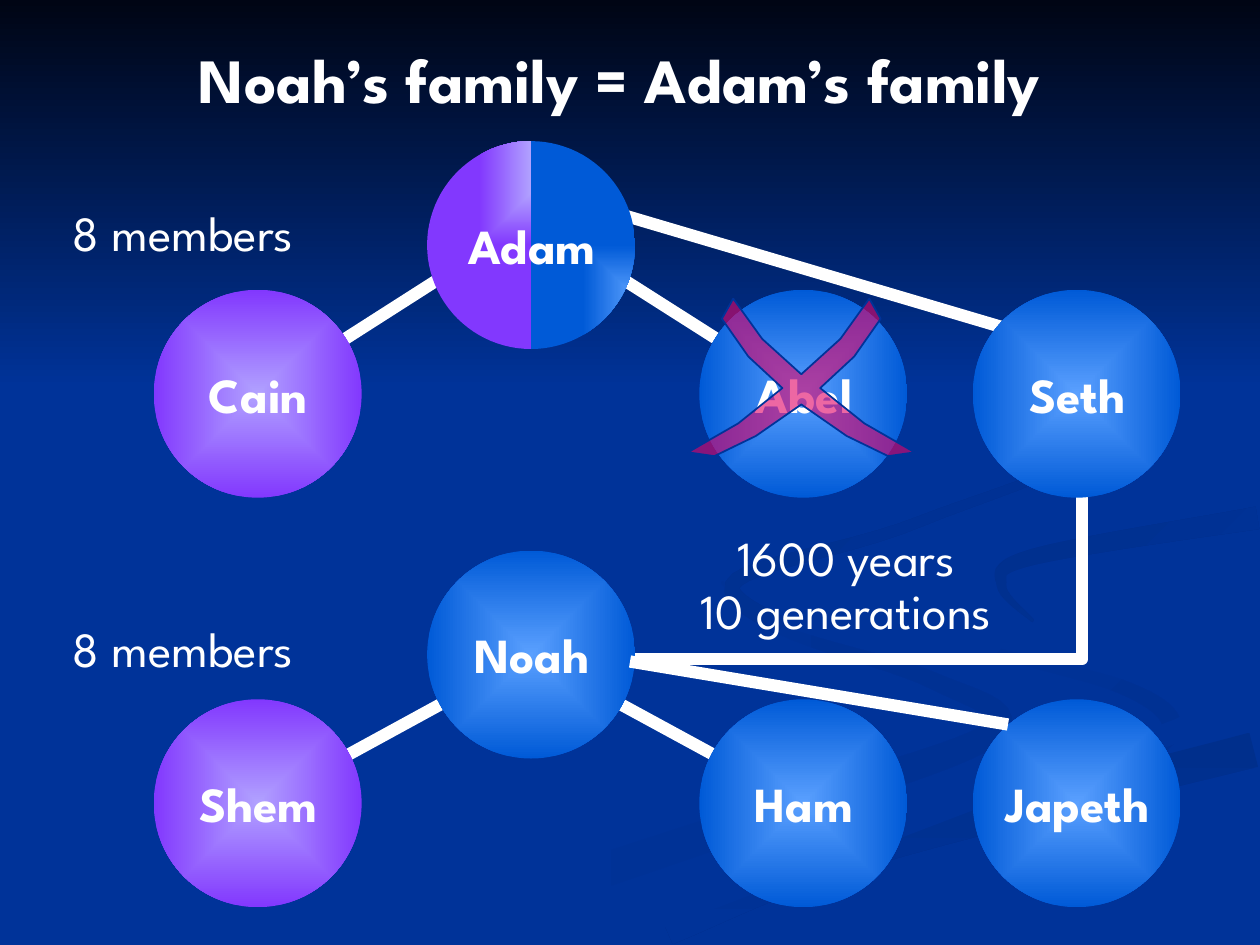
import math
from lxml import etree
from pptx import Presentation
from pptx.dml.color import RGBColor
from pptx.enum import shapes, text
from pptx.oxml import ns
from pptx.util import Inches, Pt

WHITE = RGBColor(0xFF, 0xFF, 0xFF)
BLACK = RGBColor(0x00, 0x05, 0x14)
NAVY = RGBColor(0x00, 0x33, 0x99)
DARK = RGBColor(0x00, 0x2F, 0x8C)
DIM = RGBColor(0x00, 0x31, 0x93)
PINK = RGBColor(0xE2, 0x02, 0x67)
BLUE = RGBColor(0x5A, 0xA0, 0xFF), RGBColor(0x00, 0x5A, 0xD7)
PURPLE = RGBColor(0xB1, 0xA1, 0xFF), RGBColor(0x82, 0x38, 0xFE)
FONT = "League Spartan"
SIZE = 1.65

COLS = [1.22, 3.39, 5.55, 7.72]
ROWS = [1.12, 2.3, 4.37, 5.55]
FAMILY = [
    ("Cain", 0, 1, PURPLE), ("Abel", 2, 1, BLUE), ("Shem", 0, 3, PURPLE),
    ("Ham", 2, 3, BLUE), ("Noah", 1, 2, BLUE), ("Seth", 3, 1, BLUE),
    ("Japeth", 3, 3, BLUE),
]
LINKS = [
    (4.21, 1.49, 8.54, 2.77), (4.21, 5.2, 6.38, 6.38), (4.21, 1.75, 6.38, 3.13),
    (4.21, 5.2, 2.05, 6.38), (2.05, 3.13, 4.21, 1.75),
]
BEND = [(4.26, 5.23), (8.59, 5.23), (8.59, 3.16)]
NOTES = [
    (["Noah’s family = Adam’s family"], (0.42, 0, 9, 1.25),
     dict(size=36, bold=True, anchor=text.MSO_ANCHOR.MIDDLE)),
    (["1600 years", "10 generations"], (4.7, 4.19, 4.03, 0.94), dict(gap=0.9)),
    (["8 members"], (0.48, 1.56, 2.55, 0.57), dict(align=text.PP_ALIGN.LEFT)),
    (["8 members"], (0.48, 4.86, 2.55, 0.57), dict(align=text.PP_ALIGN.LEFT)),
]
SWIRLS = [
    ([(5.73, 4.62), (6.2, 5), (7.4, 5.4), (7.9, 5.8), (6.3, 6.4), (3.3, 7.4)],
     0.02, 0.3, NAVY, DIM, 0),
    ([(7.25, 4.66), (7.7, 5.1), (8.9, 5.45), (9.3, 5.75), (9, 6.04)],
     0.02, 0.2, NAVY, DIM, 45),
    ([(5.3, 7.4), (6.9, 6.75), (9.95, 5.95)], 0.2, 0.28, DARK, NAVY, 90),
    ([(9.98, 3.95), (7.6, 4.45), (7.8, 4.95), (9.6, 5.6), (7.8, 6.3), (4.9, 7.4)],
     0.15, 0.2, NAVY, NAVY, 0),
    ([(9.98, 4.11), (8.2, 4.42), (7.95, 4.65), (8.2, 4.93)], 0.18, 0.02, DARK, NAVY, 45),
    ([(7.62, 2.35), (8.9, 3.35), (7.3, 4.14), (5.85, 4.6), (6.2, 4.98)],
     0.02, 0.15, DARK, NAVY, 45),
]
SKY = [(0, 0), (0, 3.08), (10, 3.08), (10, 0)]
AXIS = 6.36
ARMS = [
    (0, 2.97), (0.31, 2.69), (0.54, 2.37), (0.63, 2.53), (0.42, 2.83), (0.15, 3.08),
    (0.5, 3.36), (0.9, 3.59), (0.69, 3.62), (0.36, 3.46), (0, 3.21),
]

deck = Presentation()
deck.slide_width, deck.slide_height = Inches(10), Inches(7.5)
slide = deck.slides.add_slide(deck.slide_layouts[6])
slide.background.fill.solid()
slide.background.fill.fore_color.rgb = NAVY
tree = slide.shapes


def outline(points, close=True):
    spots = [(Inches(x), Inches(y)) for x, y in points]
    form = tree.build_freeform(*spots[0])
    form.add_line_segments(spots[1:], close=close)
    shape = form.convert_to_shape()
    shape.shadow.inherit = False
    return shape


def shade(shape, first, last, angle=0, focus=None, kind="shape"):
    shape.line.fill.background()
    shape.fill.gradient()
    for stop, color in zip(shape.fill.gradient_stops, (first, last)):
        stop.color.rgb = color
    shape.fill.gradient_angle = -angle % 360
    if focus:
        lin = shape.element.find(".//" + ns.qn("a:lin"))
        way = etree.Element(ns.qn("a:path"), path=kind)
        sides = {s: str(v * 1000) for s, v in zip("ltrb", focus)}
        etree.SubElement(way, ns.qn("a:fillToRect"), sides)
        lin.getparent().replace(lin, way)


def ink(line, color=WHITE, width=7):
    line.color.rgb = color
    line.width = Pt(width)


def link(x1, y1, x2, y2):
    ends = [Inches(v) for v in (x1, y1, x2, y2)]
    line = tree.add_connector(shapes.MSO_CONNECTOR.STRAIGHT, *ends)
    ink(line.line)
    etree.SubElement(line.element.spPr, ns.qn("a:effectLst"))


def write(lines, place, size=28, bold=False, align=text.PP_ALIGN.CENTER,
          anchor=text.MSO_ANCHOR.TOP, gap=None, side=0.1):
    frame = tree.add_textbox(*map(Inches, place)).text_frame
    form = dict(word_wrap=True, vertical_anchor=anchor,
                margin_left=Inches(side), margin_right=Inches(side))
    for key, value in form.items():
        setattr(frame, key, value)
    frame.text = "\n".join(lines)
    for para in frame.paragraphs:
        para.alignment, para.line_spacing = align, gap
        font = para.runs[0].font
        for key, value in dict(name=FONT, size=Pt(size), bold=bold).items():
            setattr(font, key, value)
        font.color.rgb = WHITE


def label(name, x, y):
    write([name], (x - 0.11, y + 0.54, 1.88, 0.57), bold=True, side=0.04)


def half(x, y, sign):
    r = SIZE / 2
    turns = [math.pi * i / 48 for i in range(49)]
    return outline([(x + r + sign * r * math.sin(t), y + r - r * math.cos(t)) for t in turns])


def smooth(points, steps=10):
    ends = [points[0], *points, points[-1]]
    trail = []
    for i in range(len(points) - 1):
        for t in (s / steps for s in range(steps)):
            trail.append([
                (2 * b + (c - a) * t + (2 * a - 5 * b + 4 * c - d) * t * t
                 + (3 * b - a - 3 * c + d) * t ** 3) / 2
                for a, b, c, d in zip(*ends[i:i + 4])])
    return trail + [points[-1]]


def ribbon(points, thin, wide):
    trail = smooth(points)
    last = len(trail) - 1
    left, right = [], []
    for i, (x, y) in enumerate(trail):
        (x1, y1), (x2, y2) = trail[max(i - 1, 0)], trail[min(i + 1, last)]
        turn = math.atan2(y2 - y1, x2 - x1)
        r = (thin + (wide - thin) * i / last) / 2
        dx, dy = -r * math.sin(turn), r * math.cos(turn)
        left.append((x + dx, y + dy))
        right.append((x - dx, y - dy))
    return outline(left + right[::-1])


for points, thin, wide, first, last, angle in SWIRLS:
    shade(ribbon(points, thin, wide), first, last, angle)
shade(outline(SKY), BLACK, NAVY, 90)

bend = outline(BEND, close=False)
bend.fill.background()
ink(bend.line)
for ends in LINKS:
    link(*ends)

adam = COLS[1], ROWS[0]
shade(half(*adam, -1), *PURPLE, focus=(100, 0, 0, 100), kind="rect")
shade(half(*adam, 1), *BLUE, focus=(100, 100, 0, 0), kind="rect")
label("Adam", *adam)

for name, col, row, colors in FAMILY:
    x, y = COLS[col], ROWS[row]
    disc = tree.add_shape(shapes.MSO_SHAPE.OVAL, *map(Inches, (x, y, SIZE, SIZE)))
    disc.shadow.inherit = False
    shade(disc, *colors, focus=(50, 50, 50, 50))
    label(name, x, y)

for lines, place, form in NOTES:
    write(lines, place, **form)

cross = outline([(AXIS + x, y) for x, y in ARMS] + [(AXIS - x, y) for x, y in ARMS[-2:0:-1]])
cross.fill.solid()
cross.fill.fore_color.rgb = PINK
tint = cross.element.spPr.find(".//" + ns.qn("a:srgbClr"))
etree.SubElement(tint, ns.qn("a:alpha"), val="60000")
ink(cross.line, NAVY, 1)
link(5, 5.25, 8, 5.75)

deck.save("out.pptx")
